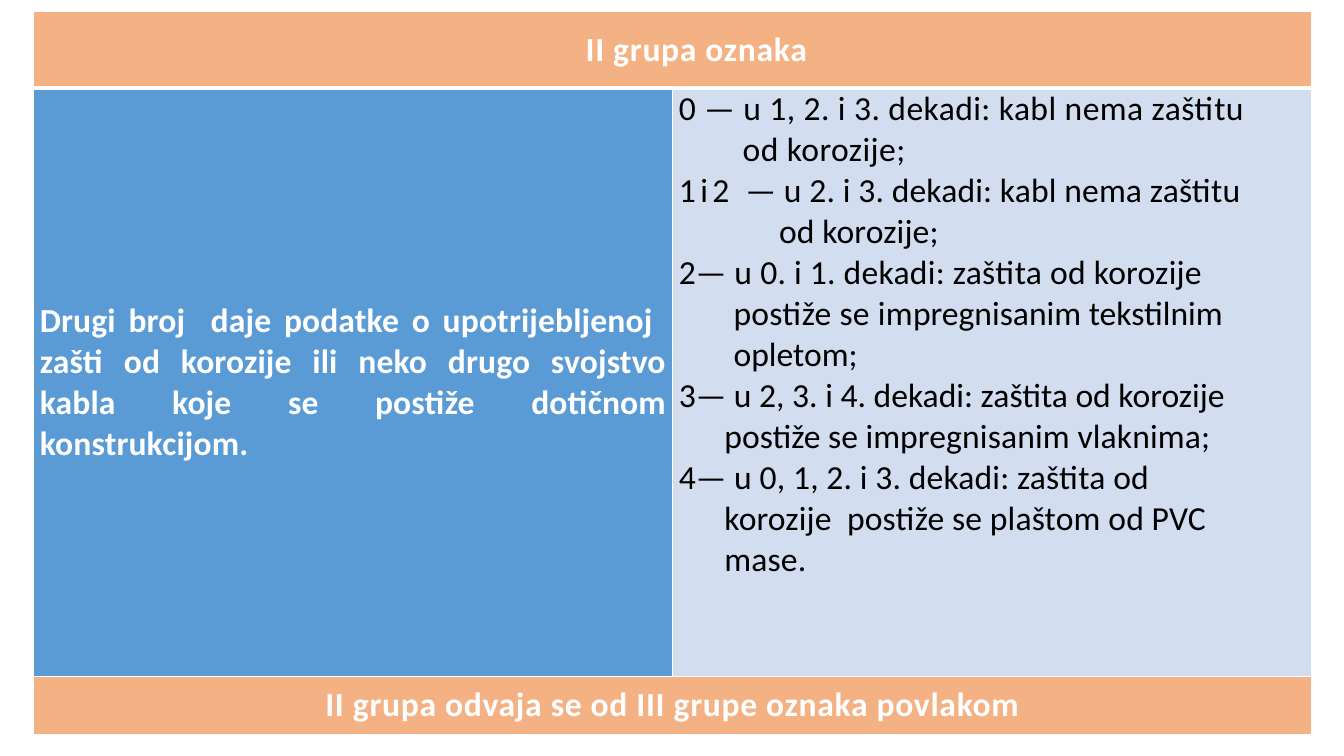
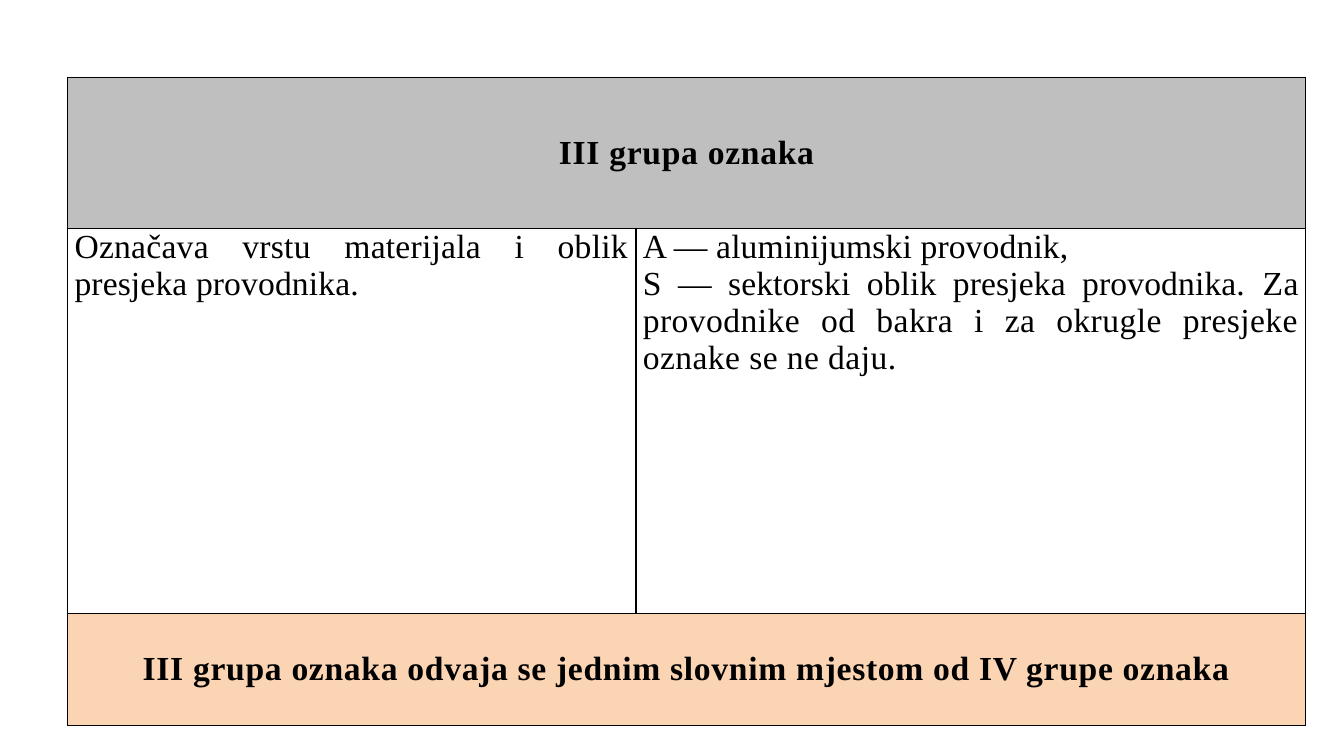
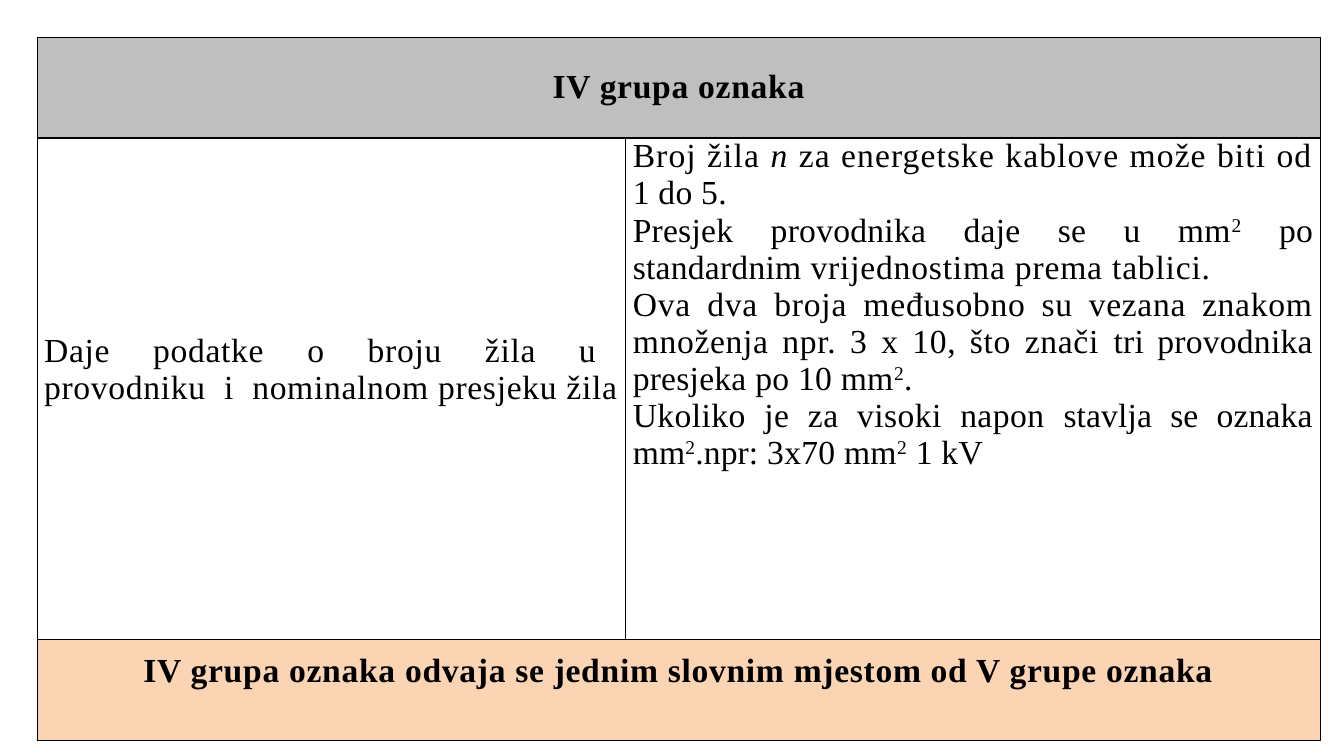
"""Three table slides describing groups II to IV of cable designations."""
from pptx import Presentation
from pptx.dml.color import RGBColor
from pptx.enum.text import MSO_ANCHOR, PP_ALIGN
from pptx.oxml.ns import qn
from pptx.util import Pt
from lxml.etree import SubElement

SIZE = 24
LINE = 27.6
CENTER, JUSTIFY, LEFT = PP_ALIGN.CENTER, PP_ALIGN.JUSTIFY, PP_ALIGN.LEFT
TOP, MIDDLE = MSO_ANCHOR.TOP, MSO_ANCHOR.MIDDLE

BLUE = dict(font="Calibri", ink="FFFFFF", body_ink="000000", border="FFFFFF", head_rule=3,
            inset=4.5, head="F4B183", left="5B9BD5", right="D2DEEF", foot="F4B183",
            left_bold=True, right_align=LEFT)
PLAIN = dict(font="Times New Roman", ink="000000", body_ink="000000", border="000000", head_rule=1,
             inset=5, head="BFBFBF", left=None, right=None, foot="FBD4B4",
             left_bold=False, right_align=JUSTIFY)

SLIDES = [
    dict(theme=BLUE, at=(24, 8), cols=(456.5, 456.5), rows=(55, 420, 41.5),
         head="II grupa oznaka", head_shift=34,
         left=[("Drugi broj  daje podatke o upotrijebljenoj  zašti od korozije ili neko "
                "drugo svojstvo kabla koje se postiže dotičnom konstrukcijom.", 0.1)],
         left_anchor=MIDDLE,
         right=[
             [("0 — u 1, 2. i 3. dekadi: kabl nema zaštitu", 0.3), ("\vod korozije;", 0.3)],
             [("1i2 ", 3.1), ("— u 2. i 3. dekadi: kabl nema zaštitu", 0.1),
              ("\vod korozije;", 0.1)],
             [("2", 0), ("— u 0. i 1. dekadi: zaštita od korozije postiže se im", 0.2),
              ("pregnisanim tekstilnim opletom;", 0)],
             [("3— u 2, 3. i 4. dekadi: zaštita od korozije postiže se im", 0),
              ("pregnisanim vlaknima;", 0.1)],
             [("4", 0), ("— u 0, 1, 2. i 3. dekadi: zaštita od", 0.1),
              ("\vkorozije  postiže se plaštom od PVC", 0.1), ("\vmase.", 0.1)]],
         hanging=(45.5, 71.5, 39, 32.5, 32.5),
         foot="II grupa odvaja se od III grupe oznaka povlakom"),
    dict(theme=PLAIN, at=(48.25, 55.5), cols=(406, 478.5), rows=(107.5, 275, 80.5),
         head="III grupa oznaka",
         left=[("Označava vrstu materijala i oblik ", 0.2), ("presjeka provodnika.", 0.1)],
         right=[
             [("A — aluminijumski provodnik,", 0.1)],
             [("S — sektorski oblik presjeka provodnika. ", 0.1),
              ("Za provodnike od bakra i za okrugle presjeke oznake se ne daju.", 0.3)]],
         foot="III grupa oznaka odvaja se jednim slovnim mjestom od IV grupe oznaka"),
    dict(theme=PLAIN, at=(26.5, 26.5), cols=(420.5, 496), rows=(72, 358.5, 72),
         head="IV grupa oznaka",
         left=[("Daje  podatke  o  broju  žila  u  provodniku  i  nominalnom presjeku žila", 0.5)],
         left_anchor=MIDDLE, left_lift=LINE,
         right=[
             [("Broj žila ", 0.8), ("n ", 0.8, "italic"),
              ("za energetske kablove može biti od ", 0.8), ("1 do 5.", 0.2)],
             [("Presjek provodnika daje se u mm", 0.2), ("2", 0.2, "super"),
              (" po standardnim ", 0.2), ("vrijednostima prema tablici.", 0.6)],
             [("Ova dva broja među", 0.6),
              ("sobno su vezana znakom množenja npr. 3 x 10, što znači ", 0.5),
              ("tri provodnika presjeka po 10 mm", 0.2), ("2", 0.2, "super"), (".", 0.2)],
             [("Ukoliko je za visoki napon ", 0.3), ("stavlja se oznaka mm", 0.1),
              ("2", 0.1, "super"), (".npr:", 0.1), (" 3x70 mm", 0.2),
              ("2", 0.2, "super"), (" 1 kV", 0.2)]],
         foot="IV grupa oznaka odvaja se jednim slovnim mjestom od V grupe oznaka",
         foot_lift=LINE),
]


def rgb(color):
    return RGBColor.from_string(color)


def add_borders(cell, color, top=1, bottom=1):
    tcPr = cell._tc.get_or_add_tcPr()
    for i, (side, width) in enumerate((("L", 1), ("R", 1), ("T", top), ("B", bottom))):
        ln = tcPr.makeelement(qn(f"a:ln{side}"), {"w": str(Pt(width))})
        SubElement(SubElement(ln, qn("a:solidFill")), qn("a:srgbClr"), val=color)
        tcPr.insert(i, ln)


def fill_cell(cell, paras, theme, color, ink, bold, align, anchor=MIDDLE,
              shift=0, lift=0, hanging=()):
    cell.margin_left, cell.margin_right = Pt(theme["inset"] + shift), Pt(theme["inset"])
    cell.margin_top, cell.margin_bottom = 0, Pt(lift)
    cell.vertical_anchor = anchor
    if color:
        cell.fill.solid()
        cell.fill.fore_color.rgb = rgb(color)
    else:
        cell.fill.background()
    tf = cell.text_frame
    for i, runs in enumerate(paras):
        p = tf.add_paragraph() if i else tf.paragraphs[0]
        p.alignment = align
        if hanging:
            pPr = p._p.get_or_add_pPr()
            pPr.set("marL", str(Pt(hanging[i])))
            pPr.set("indent", str(-Pt(hanging[i])))
        for text, spacing, *style in runs:
            if text.startswith("\v"):
                p.add_line_break()
            r = p.add_run()
            r.text = text.lstrip("\v")
            r.font.name, r.font.size, r.font.bold = theme["font"], Pt(SIZE), bold
            r.font.italic = "italic" in style
            r.font.color.rgb = rgb(ink)
            rPr = r._r.get_or_add_rPr()
            rPr.set("spc", str(round(spacing * 100)))
            if "super" in style:
                rPr.set("baseline", "30000")


def add_group_slide(prs, d):
    theme = d["theme"]
    s = prs.slides.add_slide(prs.slide_layouts[6])
    x, y = d["at"]
    table = s.shapes.add_table(3, 2, Pt(x), Pt(y), Pt(sum(d["cols"])), Pt(sum(d["rows"]))).table
    table.first_row = table.horz_banding = False
    for col, width in zip(table.columns, d["cols"]):
        col.width = Pt(width)
    for row, height in zip(table.rows, d["rows"]):
        row.height = Pt(height)
    for i in (0, 2):
        table.cell(i, 0).merge(table.cell(i, 1))

    for i, part in ((0, "head"), (2, "foot")):
        fill_cell(table.cell(i, 0), [[(d[part], 0.5)]], theme, theme[part], theme["ink"], True,
                  CENTER, shift=d.get(part + "_shift", 0), lift=d.get(part + "_lift", 0))
    fill_cell(table.cell(1, 0), [d["left"]], theme, theme["left"], theme["ink"],
              theme["left_bold"], JUSTIFY, d.get("left_anchor", TOP), lift=d.get("left_lift", 0))
    fill_cell(table.cell(1, 1), d["right"], theme, theme["right"], theme["body_ink"], False,
              theme["right_align"], TOP, hanging=d.get("hanging", ()))

    rules = (1, theme["head_rule"], 1, 1)
    for i in range(3):
        for j in range(2):
            add_borders(table.cell(i, j), theme["border"], rules[i], rules[i + 1])


def main():
    prs = Presentation()
    prs.slide_width, prs.slide_height = Pt(960), Pt(540)
    for d in SLIDES:
        add_group_slide(prs, d)
    prs.save("out.pptx")


if __name__ == "__main__":
    main()
